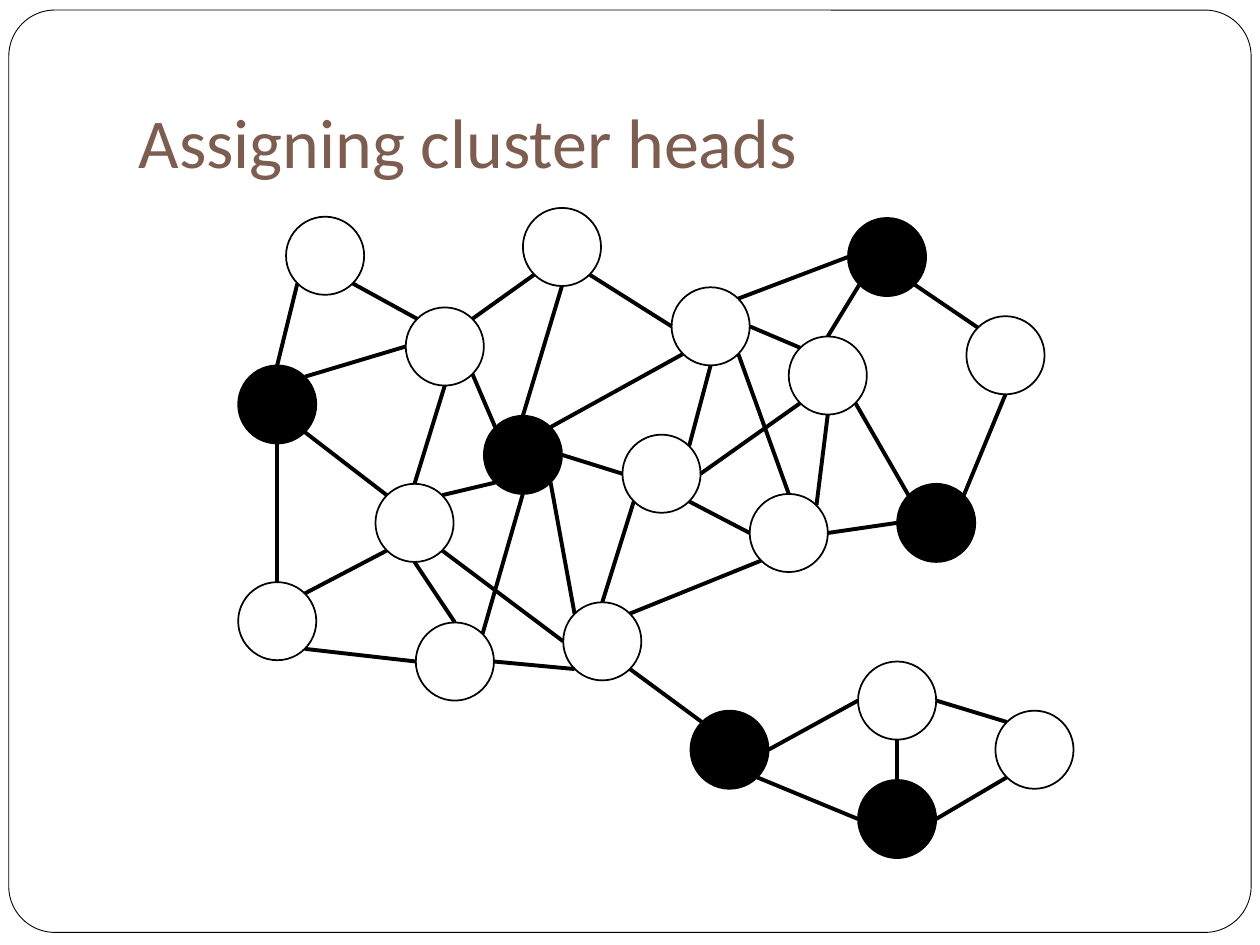
from typing import NamedTuple

from lxml import etree
from pptx import Presentation
from pptx.dml.color import RGBColor
from pptx.enum import shapes as kinds, text as txt
from pptx.oxml.ns import qn
from pptx.util import Inches, Pt

SIZE = 0.62
RAD = SIZE / 2
DIAG = 0.22  # offset of the diagonal points on a node's rim
BLACK, WHITE, BROWN = "000000", "FFFFFF", "7C5D50"

RIM = {
    "n": (0, -RAD), "s": (0, RAD), "w": (-RAD, 0), "e": (RAD, 0),
    "nw": (-DIAG, -DIAG), "ne": (DIAG, -DIAG),
    "sw": (-DIAG, DIAG), "se": (DIAG, DIAG),
}


class Node(NamedTuple):
    left: float
    top: float
    head: bool = False

    def rim(self, side: str) -> tuple[float, float]:
        dx, dy = RIM[side]
        return self.left + RAD + dx, self.top + RAD + dy


class Edge(NamedTuple):
    start: str
    out: str
    end: str
    into: str


NODES = {
    "A": Node(2.27, 1.72), "B": Node(4.15, 1.65), "C": Node(6.73, 1.73, True),
    "D": Node(3.22, 2.44), "E": Node(5.33, 2.28), "F": Node(6.26, 2.67),
    "G": Node(7.67, 2.51), "H": Node(1.89, 2.9, True), "I": Node(3.84, 3.3, True),
    "J": Node(4.94, 3.45), "K": Node(2.98, 3.84), "L": Node(5.95, 3.92),
    "M": Node(7.12, 3.84, True), "N": Node(1.89, 4.62), "O": Node(3.3, 4.94),
    "P": Node(4.47, 4.78), "Q": Node(5.48, 5.64, True), "R": Node(6.81, 5.25),
    "S": Node(7.9, 5.64), "T": Node(6.81, 6.19, True),
}

# Each link: node, side it leaves by, node, side it enters by
LINKS = """
I e J w, E e F nw, F n C sw, B se E w, J ne E s, D se I nw, I ne E sw, J se L w,
B s I n, D ne B sw, E se L n, F s L ne, J e F sw, E ne C w, N ne K sw, N se O w,
O e P sw, K s O n, D s K n, K se P w, N n H s, H se K nw, P se Q nw, P ne L sw,
O ne I s, P n J sw, P nw I se, K ne I sw, H ne D w, T n R s, S sw T e, D nw A se,
H n A sw, S nw R e, T w Q se, Q e R w, G s M ne, C se G nw, F se M nw, L e M w
"""
EDGES = [Edge(*link.split()) for link in LINKS.split(",")]


def paint(part, color: str) -> None:
    """Give a fill, line or font a solid colour."""
    if hasattr(part, "solid"):
        part.solid()
        part.fore_color.rgb = RGBColor.from_string(color)
    else:
        part.color.rgb = RGBColor.from_string(color)


def write(frame, words: str, *, size: float, color: str, font: str = "Calibri") -> None:
    para = frame.paragraphs[0]
    para.alignment = txt.PP_ALIGN.LEFT
    run = para.add_run()
    run.text = words
    run.font.size, run.font.name = Pt(size), font
    paint(run.font, color)


def add_form(slide, kind, box: tuple, fill: str, width: float):
    form = slide.shapes.add_shape(kind, *map(Inches, box))
    form.shadow.inherit = False
    paint(form.fill, fill)
    paint(form.line, BLACK)
    form.line.width = Pt(width)
    return form


def add_frame(slide) -> None:
    """Put the rounded slide border behind everything else."""
    frame = add_form(slide, kinds.MSO_SHAPE.ROUNDED_RECTANGLE,
                     (0.07, 0.08, 9.86, 7.32), WHITE, 0.5)
    frame.adjustments[0] = 0.05
    slide.shapes.element.insert(2, frame.element)


def add_title(slide) -> None:
    title = slide.shapes.title
    title.left, title.top = Inches(1), Inches(0.3)
    title.width, title.height = Inches(8.5), Inches(1.25)
    frame = title.text_frame
    frame.vertical_anchor = txt.MSO_ANCHOR.BOTTOM
    frame.margin_bottom = Inches(0.1)
    write(frame, "Assigning cluster heads", size=40, color=BROWN)


def add_node(slide, node: Node) -> None:
    add_form(slide, kinds.MSO_SHAPE.FLOWCHART_CONNECTOR,
             (node.left, node.top, SIZE, SIZE), BLACK if node.head else WHITE, 1)


def add_edge(slide, edge: Edge) -> None:
    ends = NODES[edge.start].rim(edge.out) + NODES[edge.end].rim(edge.into)
    line = slide.shapes.add_connector(kinds.MSO_CONNECTOR.STRAIGHT, *map(Inches, ends))
    paint(line.line, BLACK)
    line.line.width = Pt(2.25)
    etree.SubElement(line.element.spPr, qn("a:effectLst"))


def main() -> None:
    deck = Presentation()
    deck.slide_width, deck.slide_height = Inches(10), Inches(7.5)
    slide = deck.slides.add_slide(deck.slide_layouts[5])
    add_frame(slide)
    add_title(slide)
    for node in NODES.values():
        add_node(slide, node)
    for edge in EDGES:
        add_edge(slide, edge)
    deck.save("out.pptx")


if __name__ == "__main__":
    main()
